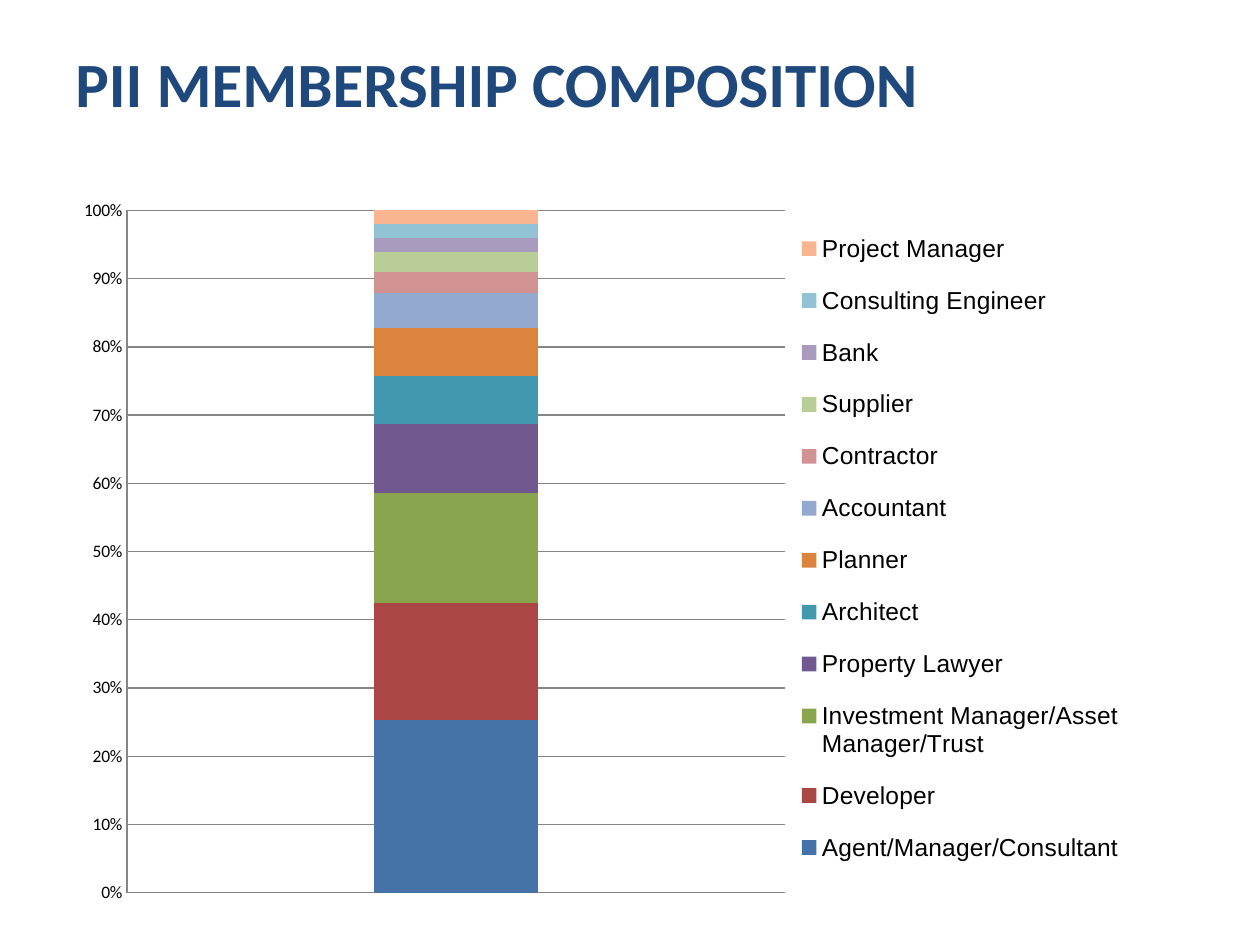
from dataclasses import dataclass

from lxml import etree
from pptx import Presentation
from pptx import util as u
from pptx.chart.data import CategoryChartData
from pptx.dml.color import RGBColor
from pptx.enum import chart as ch
from pptx.oxml import parse_xml
from pptx.oxml.ns import nsdecls, qn

SLIDE_W, SLIDE_H = u.Inches(10), u.Inches(7.5)


@dataclass(frozen=True)
class Theme:
    title: str = "1F497D"
    ink: str = "000000"
    grid: str = "868686"
    font: str = "Calibri"
    legend_font: str = "Arial"
    title_size: int = 36
    axis_size: int = 10
    legend_size: int = 14


THEME = Theme()

# member type, percentage, colour
MEMBERS = [
    ("Agent/Manager/Consultant", 25, "4572A7"),
    ("Developer", 17, "AA4643"),
    ("Investment Manager/Asset Manager/Trust", 16, "89A54E"),
    ("Property Lawyer", 10, "71588F"),
    ("Architect", 7, "4198AF"),
    ("Planner", 7, "DB843D"),
    ("Accountant", 5, "93A9CF"),
    ("Contractor", 3, "D19392"),
    ("Supplier", 3, "B9CD96"),
    ("Bank", 2, "A99BBD"),
    ("Consulting Engineer", 2, "91C3D5"),
    ("Project Manager", 2, "F9B590"),
]


def box(left, top, width, height):
    """Turn shares of the slide's size into lengths."""
    return [u.Emu(round(share * side)) for share, side in
            zip((left, top, width, height), (SLIDE_W, SLIDE_H) * 2)]


def style_font(font, name, size, color, bold=False):
    font.name, font.size, font.bold = name, u.Pt(size), bold
    font.color.rgb = RGBColor.from_string(color)


def style_line(line):
    line.color.rgb = RGBColor.from_string(THEME.grid)
    line.width = u.Pt(0.75)


def set_layout(parent, before, x, y, w, h, inner=False):
    """Place a chart part by shares of the chart's size."""
    for old in parent.findall(qn("c:layout")):
        parent.remove(old)
    layout = parse_xml(f"<c:layout {nsdecls('c')}><c:manualLayout/></c:layout>")
    settings = [("xMode", "edge"), ("yMode", "edge"),
                ("x", x), ("y", y), ("w", w), ("h", h)]
    if inner:
        settings.insert(0, ("layoutTarget", "inner"))
    for tag, value in settings:
        etree.SubElement(layout[0], qn(f"c:{tag}")).set("val", str(value))
    parent.find(qn(before)).addprevious(layout)


def add_title(slide, caption, area):
    tf = slide.shapes.add_textbox(*area).text_frame
    tf.word_wrap = True
    tf.text = caption
    r = tf.paragraphs[0].runs[0]
    style_font(r.font, THEME.font, THEME.title_size, THEME.title, bold=True)


def style_axes(chart):
    chart.category_axis.visible = False
    axis = chart.value_axis
    axis.minimum_scale, axis.maximum_scale, axis.major_unit = 0, 1, 0.1
    axis.major_tick_mark = axis.minor_tick_mark = ch.XL_TICK_MARK.NONE
    axis.tick_labels.number_format = "0%"
    axis.tick_labels.number_format_is_linked = False
    axis.has_major_gridlines = True
    style_line(axis.major_gridlines.format.line)
    style_line(axis.format.line)


def add_legend(chart):
    chart.has_legend = True
    legend = chart.legend
    legend.position = ch.XL_LEGEND_POSITION.RIGHT
    legend.include_in_layout = False
    style_font(legend.font, THEME.legend_font, THEME.legend_size, THEME.ink)
    set_layout(legend._element, "c:overlay", 0.67, 0.03, 0.32, 0.94)


def add_membership_chart(slide, area):
    data = CategoryChartData()
    data.categories = ["1"]
    for name, share, _ in MEMBERS:
        data.add_series(name, [share])
    chart = slide.shapes.add_chart(
        ch.XL_CHART_TYPE.COLUMN_STACKED_100, *area, data).chart
    chart.has_title = False
    style_font(chart.font, THEME.font, THEME.axis_size, THEME.ink)
    plot = chart.plots[0]
    plot.gap_width, plot.overlap, plot.vary_by_categories = 300, 100, False
    for series, (_, _, color) in zip(plot.series, MEMBERS):
        series.format.fill.solid()
        series.format.fill.fore_color.rgb = RGBColor.from_string(color)
    style_axes(chart)
    add_legend(chart)
    plot_area = chart._chartSpace.chart.plotArea
    set_layout(plot_area, "c:barChart", 0.07, 0.03, 0.6, 0.95, inner=True)


def main():
    prs = Presentation()
    prs.slide_width, prs.slide_height = SLIDE_W, SLIDE_H
    slide = prs.slides.add_slide(prs.slide_layouts[6])
    add_title(slide, "PII MEMBERSHIP COMPOSITION", box(0.05, 0.04, 0.86, 0.17))
    add_membership_chart(slide, box(0.04, 0.2, 0.87, 0.76))
    prs.save("out.pptx")


if __name__ == "__main__":
    main()
